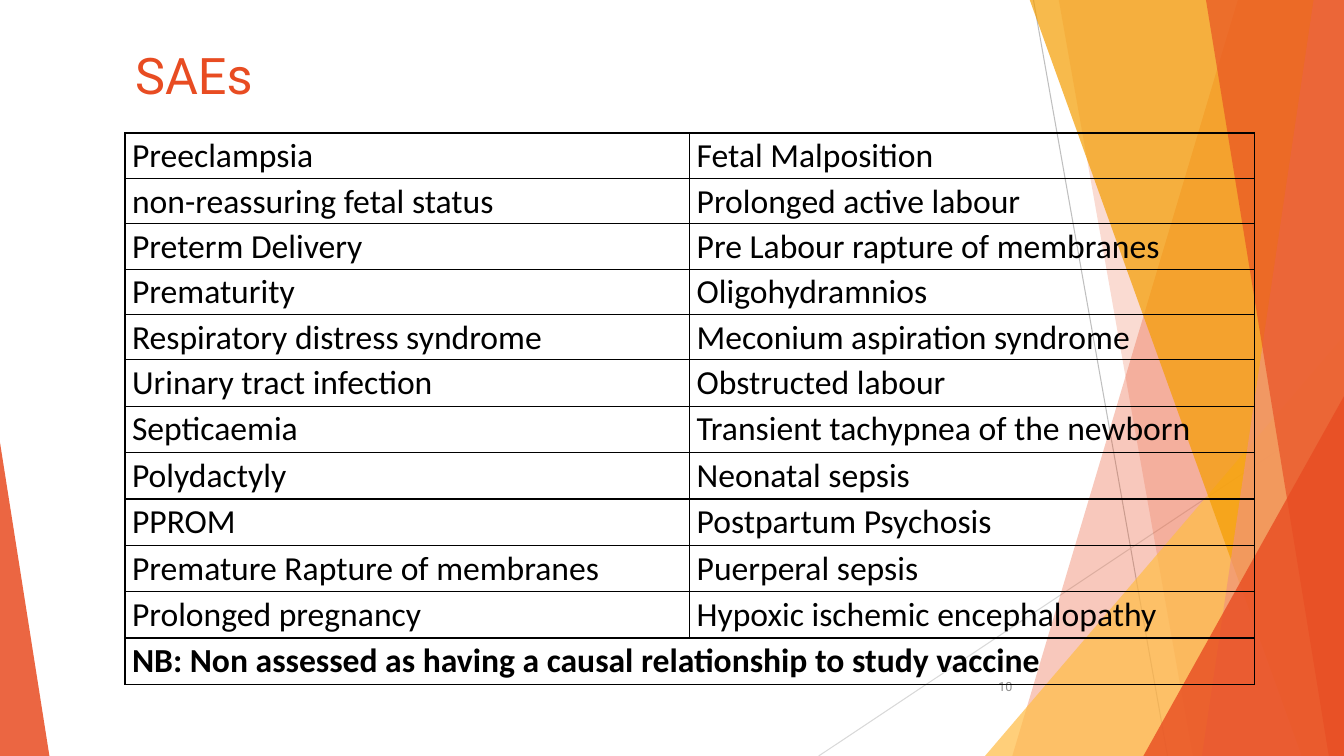
from lxml import etree
from pptx import Presentation
from pptx.dml.color import RGBColor
from pptx.enum.shapes import MSO_CONNECTOR, MSO_SHAPE
from pptx.enum.text import MSO_ANCHOR, MSO_AUTO_SIZE, PP_ALIGN
from pptx.oxml import parse_xml
from pptx.oxml.ns import nsdecls, qn
from pptx.util import Inches, Pt

STRAIGHT, TRIANGLE = MSO_CONNECTOR.STRAIGHT, MSO_SHAPE.ISOSCELES_TRIANGLE
TOP, MIDDLE, NO_FIT = MSO_ANCHOR.TOP, MSO_ANCHOR.MIDDLE, MSO_AUTO_SIZE.NONE
LEFT, RIGHT = PP_ALIGN.LEFT, PP_ALIGN.RIGHT

ORANGE = RGBColor(0xE8, 0x4C, 0x22)
AMBER = RGBColor(0xF4, 0x9D, 0x00)
YELLOW = RGBColor(0xFF, 0xBD, 0x47)
SALMON = RGBColor(0xF1, 0x94, 0x7A)
SILVER = RGBColor(0xBF, 0xBF, 0xBF)
PALE = RGBColor(0xD9, 0xD9, 0xD9)
GRAY = RGBColor(0x8C, 0x8C, 0x8C)
BLACK = RGBColor(0x00, 0x00, 0x00)

W, H = 13.33, 7.5
EVENTS = [
    ("Preeclampsia", "Fetal Malposition"),
    ("non-reassuring fetal status", "Prolonged active labour"),
    ("Preterm Delivery", "Pre Labour rapture of membranes"),
    ("Prematurity", "Oligohydramnios"),
    ("Respiratory distress syndrome", "Meconium aspiration syndrome"),
    ("Urinary tract infection", "Obstructed labour"),
    ("Septicaemia", "Transient tachypnea of the newborn"),
    ("Polydactyly", "Neonatal sepsis"),
    ("PPROM", "Postpartum Psychosis"),
    ("Premature Rapture of membranes", "Puerperal sepsis"),
    ("Prolonged pregnancy", "Hypoxic ischemic encephalopathy"),
]
NOTE = "NB: Non assessed as having a causal relationship to study vaccine"


class Deck:
    """Holds the style and the current slide, and draws each kind of element."""

    heading = {"name": "Roboto", "size": Pt(36)}
    number = {"name": "Roboto", "size": Pt(9)}
    body = {"name": "Calibri", "size": Pt(24), "bold": False}

    def __init__(self):
        self.prs = Presentation()
        self.prs.slide_width, self.prs.slide_height = Inches(W), Inches(H)
        self.s = self.prs.slides.add_slide(self.prs.slide_layouts[5])

    def put_text(self, tf, text, style, color, align=LEFT, spacing=None):
        p = tf.paragraphs[0]
        p.alignment, p.line_spacing = align, spacing
        r = p.add_run()
        r.text = text
        for key, value in style.items():
            setattr(r.font, key, value)
        r.font.color.rgb = color

    def paint(self, sp, color, opacity):
        sp.shadow.inherit = False
        sp.line.fill.background()
        sp.fill.solid()
        sp.fill.fore_color.rgb = color
        clr = sp.element.spPr.find(qn("a:solidFill"))[0]
        etree.SubElement(clr, qn("a:alpha"), val=str(opacity * 1000))

    def line(self, x1, y1, x2, y2, color):
        c = self.s.shapes.add_connector(
            STRAIGHT, Inches(x1), Inches(y1), Inches(x2), Inches(y2))
        c.line.color.rgb, c.line.width = color, Pt(0.75)
        etree.SubElement(c.element.spPr, qn("a:effectLst"))

    def band(self, top_x, bottom_x, color, opacity):
        pts = [(top_x, -0.01), (W, -0.01), (W, H), (bottom_x, H)]
        pts = [(Inches(x), Inches(y)) for x, y in pts]
        fb = self.s.shapes.build_freeform(*pts[0])
        fb.add_line_segments(pts[1:], close=True)
        self.paint(fb.convert_to_shape(), color, opacity)

    def triangle(self, x, y, w, apex, color, opacity):
        sp = self.s.shapes.add_shape(
            TRIANGLE, Inches(x), Inches(y), Inches(w), Inches(H - y))
        sp.adjustments[0] = apex
        self.paint(sp, color, opacity)

    def title(self, text, x, y, w, h):
        sp = self.s.shapes.title
        sp.element.getparent().append(sp.element)
        sp.left, sp.top, sp.width, sp.height = map(Inches, (x, y, w, h))
        tf = sp.text_frame
        tf.auto_size, tf.vertical_anchor = NO_FIT, TOP
        self.put_text(tf, text, self.heading, ORANGE)

    def page_number(self, text, x, y, w, h):
        tf = self.s.shapes.add_textbox(*map(Inches, (x, y, w, h))).text_frame
        tf.word_wrap, tf.vertical_anchor = True, MIDDLE
        self.put_text(tf, text, self.number, GRAY, RIGHT)

    def cell(self, cell, text, bold=False):
        margins = {"margin_left": 0.07, "margin_right": 0.07,
                   "margin_top": 0, "margin_bottom": 0}
        for key, value in margins.items():
            setattr(cell, key, Inches(value))
        if text:
            self.put_text(cell.text_frame, text, {**self.body, "bold": bold},
                          BLACK, spacing=1.07)
        tcPr = cell._tc.get_or_add_tcPr()
        for side in ("lnL", "lnR", "lnT", "lnB"):
            tcPr.append(parse_xml(
                f'<a:{side} {nsdecls("a")} w="12700"><a:solidFill>'
                f'<a:srgbClr val="{BLACK}"/></a:solidFill></a:{side}>'))
        cell.fill.background()

    def table(self, rows, note, x, y, w, h):
        n = len(rows) + 1
        tbl = self.s.shapes.add_table(n, 2, *map(Inches, (x, y, w, h))).table
        tbl.first_row = tbl.horz_banding = False
        for i, row in enumerate(tbl.rows):
            row.height = Inches(0.45 if i < 5 else 0.46)
        tbl.cell(n - 1, 0).merge(tbl.cell(n - 1, 1))
        for i, texts in enumerate(rows + [(note, "")]):
            for j, text in enumerate(texts):
                self.cell(tbl.cell(i, j), text, bold=i == n - 1)


def main():
    d = Deck()
    d.line(10.25, 0, 11.58, H, SILVER)
    d.line(W, 4.03, 8.12, H, PALE)
    d.band(12.28, 10.04, ORANGE, 30)
    d.band(10.5, 11.83, ORANGE, 20)
    d.triangle(9.77, 3.33, 3.56, 1, YELLOW, 72)
    d.band(10.21, 12.91, AMBER, 70)
    d.band(13.03, 11.92, SALMON, 70)
    d.band(11.96, 13.18, ORANGE, 65)
    d.triangle(11.34, 3.93, 1.99, 1, ORANGE, 80)
    d.triangle(0, 4.39, 0.49, 0, ORANGE, 85)
    d.title("SAEs", 1.24, 0.39, 11.42, 0.84)
    d.page_number("10", 9.39, 6.61, 0.75, 0.4)
    d.table(EVENTS, NOTE, 1.24, 1.32, 11.2, 5.45)
    d.prs.save("out.pptx")


if __name__ == "__main__":
    main()
